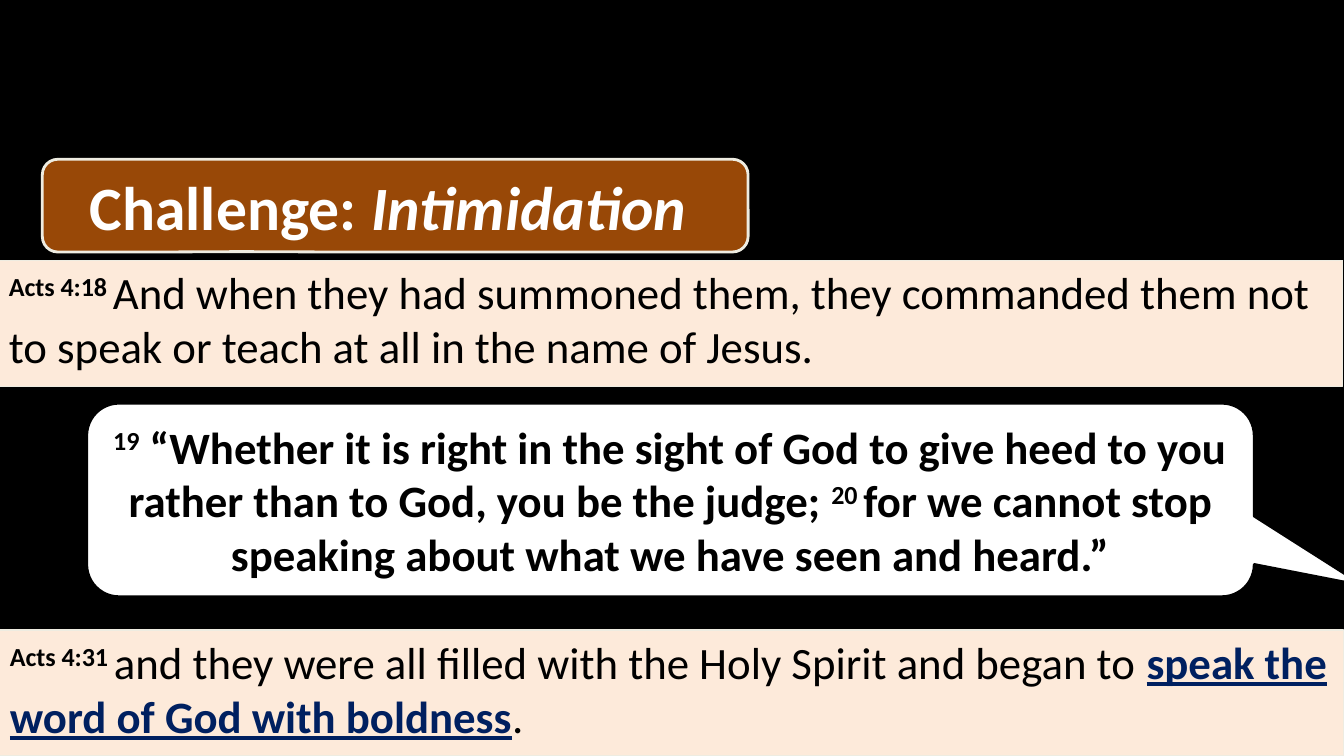
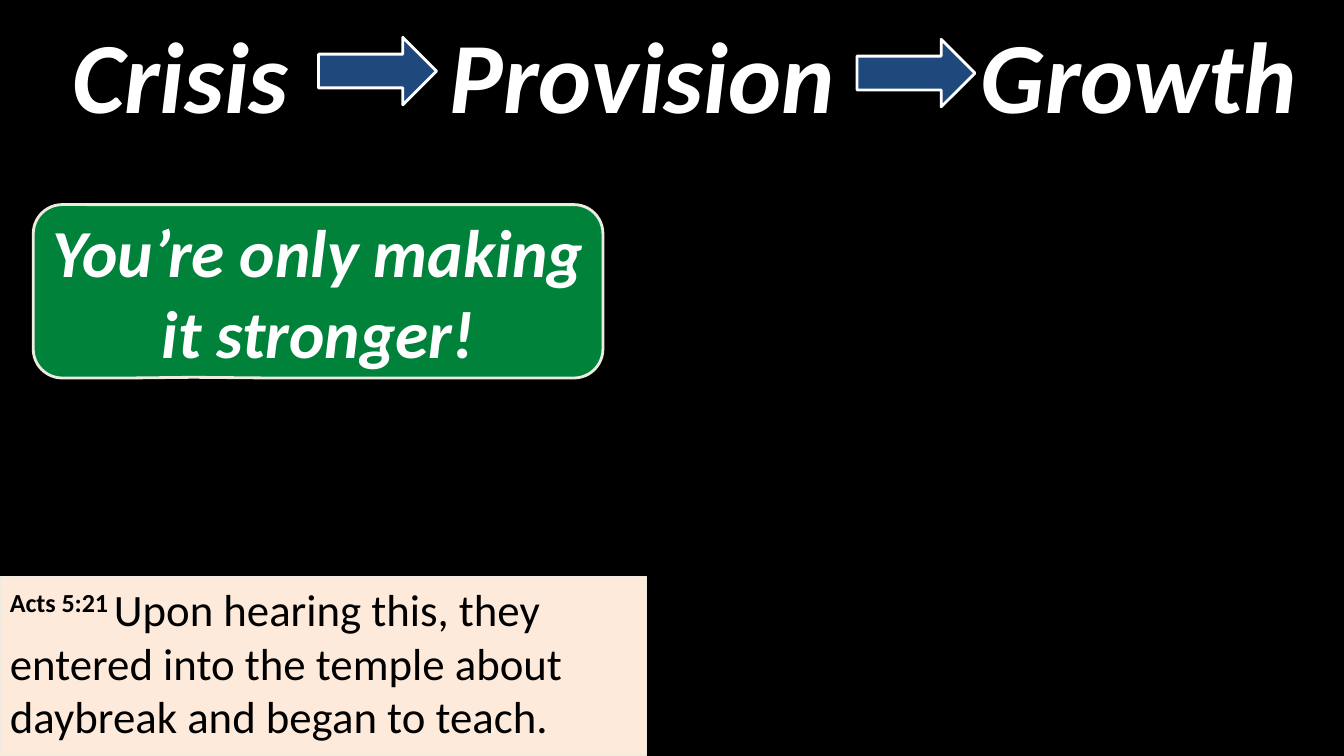
from pptx import Presentation
from pptx.dml.color import RGBColor
from pptx.enum.shapes import MSO_SHAPE as Shape
from pptx.enum.text import MSO_ANCHOR as Anchor, PP_ALIGN as Align
from pptx.util import Inches, Pt

BLACK = RGBColor(0x00, 0x00, 0x00)
WHITE = RGBColor(0xFF, 0xFF, 0xFF)
CREAM = RGBColor(0xEE, 0xEC, 0xE1)
PEACH = RGBColor(0xFD, 0xEA, 0xDA)
BROWN = RGBColor(0x98, 0x48, 0x07)
GREEN = RGBColor(0x00, 0x82, 0x3B)
BLUE = RGBColor(0x1F, 0x49, 0x7D)
NAVY = RGBColor(0x00, 0x20, 0x60)
FONT = "Calibri"
VERSE_SIZE = 32
BANNER_TAIL = (-0.219, 0.496, 0.167)
SPEECH_TAIL = (0.594, 0.444, 0.167)


def add_box(slide, kind, box, fill, line=None, weight=2, adjustments=()):
    """Add a flat filled shape in box (left, top, width, height in inches)."""
    shape = slide.shapes.add_shape(kind, *map(Inches, box))
    shape.shadow.inherit = False
    shape.fill.solid()
    shape.fill.fore_color.rgb = fill
    if line is None:
        shape.line.fill.background()
    else:
        shape.line.color.rgb = line
        shape.line.width = Pt(weight)
    for index, value in enumerate(adjustments):
        shape.adjustments[index] = value
    return shape


def write(shape, runs, size, color, align=Align.CENTER, anchor=Anchor.MIDDLE, **style):
    """Write one paragraph of (text, run style) pairs over a shared style."""
    frame = shape.text_frame
    frame.word_wrap = True
    frame.vertical_anchor = anchor
    paragraph = frame.paragraphs[0]
    paragraph.alignment = align
    font = paragraph.font
    font.name, font.size, font.color.rgb = FONT, Pt(size), color
    for key, value in style.items():
        setattr(font, key, value)
    for text, run_style in runs:
        run = paragraph.add_run()
        run.text = text
        for key, value in run_style.items():
            if key == "color":
                run.font.color.rgb = value
            elif key == "raised":
                run._r.get_or_add_rPr().set("baseline", "30000")
            else:
                setattr(run.font, key, value)


def add_verse(slide, box, reference, *runs):
    """Add a peach scripture band led by a raised bold reference."""
    band = add_box(slide, Shape.RECTANGLE, box, PEACH, CREAM, 0.75)
    lead = (reference + " ", {"bold": True, "raised": True})
    write(band, [lead, *runs], VERSE_SIZE, BLACK, Align.LEFT, Anchor.TOP)


def add_banner(slide, box, fill, size, *runs):
    """Add a rounded, cream-edged banner with bold white text."""
    banner = add_box(slide, Shape.ROUNDED_RECTANGULAR_CALLOUT, box, fill, CREAM,
                     adjustments=BANNER_TAIL)
    write(banner, runs, size, WHITE, bold=True)


def add_speech(slide, box, *runs):
    """Add a white speech bubble with bold verse text."""
    bubble = add_box(slide, Shape.ROUNDED_RECTANGULAR_CALLOUT, box, WHITE, BLACK,
                     adjustments=SPEECH_TAIL)
    write(bubble, runs, VERSE_SIZE, BLACK, bold=True)


def add_stages(slide, top, height, stages, arrows):
    """Add the row of stage words, then the arrows that link them."""
    for word, left, width in stages:
        stage = add_box(slide, Shape.RECTANGLE, (left, top, width, height), BLACK)
        write(stage, [(word, {})], 72, WHITE, bold=True, italic=True)
    for left, drop in arrows:
        add_box(slide, Shape.RIGHT_ARROW, (left, top + drop, 1.17, 0.67), BLUE, WHITE)


def add_black_slide(deck):
    """Add a blank slide with a black background."""
    slide = deck.slides.add_slide(deck.slide_layouts[6])
    slide.background.fill.solid()
    slide.background.fill.fore_color.rgb = BLACK
    return slide


def build_challenge(deck):
    """Build the slide on intimidation and the apostles' answer."""
    slide = add_black_slide(deck)
    add_banner(slide, (0.42, 1.58, 7, 0.92), BROWN, 44,
               ("Challenge: ", {}), ("Intimidation ", {"italic": True}))
    add_verse(slide, (-0.01, 2.58, 13.33, 1.25), "Acts 4:18",
              ("And when they had summoned them, they commanded them not "
               "to speak or teach at all in the name of Jesus.", {}))
    add_verse(slide, (0, 6.25, 13.33, 1.25), "Acts 4:31",
              ("and they were all filled with the Holy Spirit and began to ", {}),
              ("speak the word of God with boldness",
               {"bold": True, "underline": True, "color": NAVY}),
              (".", {}))
    add_speech(slide, (0.86, 4, 11.58, 1.92),
               ("19", {"raised": True}),
               (" “Whether it is right in the sight of God to give heed to you "
                "rather than to God, you be the judge; ", {}),
               ("20 ", {"raised": True}),
               ("for we cannot stop speaking about what we have seen and heard.”", {}))


def build_growth(deck):
    """Build the slide on crisis leading to growth."""
    slide = add_black_slide(deck)
    add_verse(slide, (0, 5.72, 6.41, 1.78), "Acts 5:21",
              ("Upon hearing this, they entered into the temple about "
               "daybreak and began to teach.", {}))
    add_stages(slide, 0.17, 1.11,
               [("Crisis", 0.33, 2.92), ("Provision", 4.08, 4.58), ("Growth", 9.42, 3.75)],
               [(3.16, 0.2), (8.5, 0.22)])
    add_banner(slide, (0.33, 2.03, 5.65, 1.72), GREEN, 48,
               ("You’re only making it stronger!", {"italic": True}))


def main():
    """Build and save the deck."""
    deck = Presentation()
    deck.slide_width, deck.slide_height = Inches(13.33), Inches(7.5)
    build_challenge(deck)
    build_growth(deck)
    deck.save("out.pptx")


if __name__ == "__main__":
    main()
